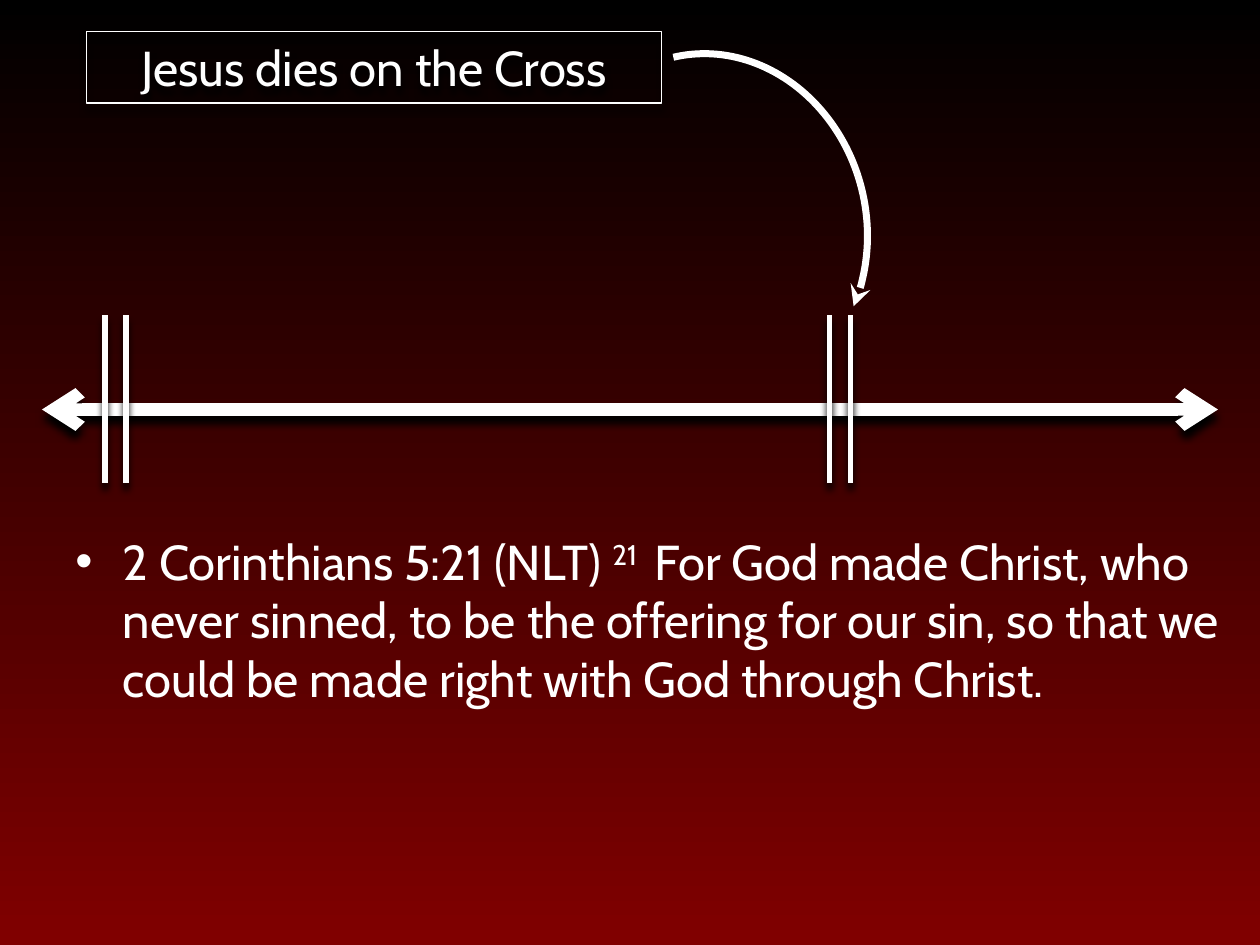
from lxml import etree
from pptx import Presentation
from pptx.dml.color import RGBColor
from pptx.enum import shapes as s, text as t
from pptx.oxml import parse_xml
from pptx.oxml.ns import qn
from pptx.util import Pt

NS = 'xmlns:a="http://schemas.openxmlformats.org/drawingml/2006/main"'
WHITE = "FFFFFF"
FONT = {"name": "Cabin", "size": Pt(28)}


def color(code):
    """Turn a hex string into a colour."""
    return RGBColor.from_string(code)


def shade(part, on=True):
    """Give a part a soft shadow below it, or none."""
    glow = ('<a:outerShdw blurRad="50800" dist="50800" dir="5400000" rotWithShape="0">'
            '<a:srgbClr val="000000"/></a:outerShdw>') if on else ""
    tree = part._element.spPr
    for old in tree.findall(qn("a:effectLst")):
        tree.remove(old)
    tree.append(parse_xml(f"<a:effectLst {NS}>{glow}</a:effectLst>"))


def stroke(part, width, head=None, tail=None):
    """Draw a white line with optional arrowheads."""
    part.line.color.rgb = color(WHITE)
    part.line.width = Pt(width)
    for tag, kind in (("headEnd", head), ("tailEnd", tail)):
        if kind:
            etree.SubElement(part.line._get_or_add_ln(), qn(f"a:{tag}"), type=kind)


def write(para, words):
    """Add a white run to a paragraph."""
    run = para.add_run()
    run.text = words
    for key, val in FONT.items():
        setattr(run.font, key, val)
    run.font.color.rgb = color(WHITE)
    return run


def rule(slide, ends, width, **tips):
    """Draw a straight shaded line."""
    line = slide.shapes.add_connector(s.MSO_CONNECTOR.STRAIGHT, *map(Pt, ends))
    stroke(line, width, **tips)
    shade(line)


def axis(slide, left, top, width, height):
    """Draw the time line with two pairs of ticks."""
    mid = top + 54
    rule(slide, (left, mid, left + width, mid), 7, head="arrow", tail="arrow")
    for start in (36, 450):
        for gap in (0, 12):
            x = left + start + gap
            rule(slide, (x, top + height, x, top), 3)


def event(slide, left, top, width, height):
    """Draw the event label and the curved arrow to its date."""
    box = slide.shapes.add_shape(s.MSO_SHAPE.RECTANGLE, *map(Pt, (left, top, width, height)))
    box.fill.background()
    stroke(box, 0.75)
    shade(box)
    frame = box.text_frame
    for key, val in {"word_wrap": True, "auto_size": t.MSO_AUTO_SIZE.SHAPE_TO_FIT_TEXT}.items():
        setattr(frame, key, val)
    para = frame.paragraphs[0]
    para.alignment = t.PP_ALIGN.CENTER
    write(para, "Jesus dies on the Cross")
    arc = slide.shapes.add_shape(
        s.MSO_SHAPE.ARC, *map(Pt, (left + 271, top + 12, 174.5, 198)))
    arc.rotation = 346
    arc.adjustments[0], arc.adjustments[1] = 162.36, 26.33
    arc.fill.background()
    stroke(arc, 4, tail="stealth")
    shade(arc, False)


def verse(slide, *area):
    """Write the bulleted verse."""
    frame = slide.shapes.add_textbox(*map(Pt, area)).text_frame
    frame.word_wrap = True
    para = frame.paragraphs[0]
    props = para._p.get_or_add_pPr()
    for key, val in {"marL": Pt(27), "indent": -Pt(27)}.items():
        props.set(key, str(val))
    props.append(parse_xml(f'<a:buFont {NS} typeface="Arial"/>'))
    props.append(parse_xml(f'<a:buChar {NS} char="•"/>'))
    write(para, "2 Corinthians 5:21 (NLT) ")
    write(para, "21 ")._r.get_or_add_rPr().set("baseline", "30000")
    write(para, " For God made Christ, who never sinned, to be the offering for our sin, "
                "so that we could be made right with God through Christ.")


def back(slide):
    """Fade the background from dark red up to black."""
    fill = slide.background.fill
    fill.gradient()
    fill.gradient_angle = 90
    for stop, code in zip(fill.gradient_stops, ("800000", "000000")):
        stop.color.rgb = color(code)


def main():
    """Build and save the slide."""
    deck = Presentation()
    deck.slide_width, deck.slide_height = Pt(720), Pt(540)
    slide = deck.slides.add_slide(deck.slide_layouts[6])
    back(slide)
    axis(slide, 24, 180, 672, 96)
    event(slide, 49.5, 18, 328.5, 41)
    verse(slide, 36, 300, 672, 222)
    deck.save("out.pptx")


if __name__ == "__main__":
    main()
